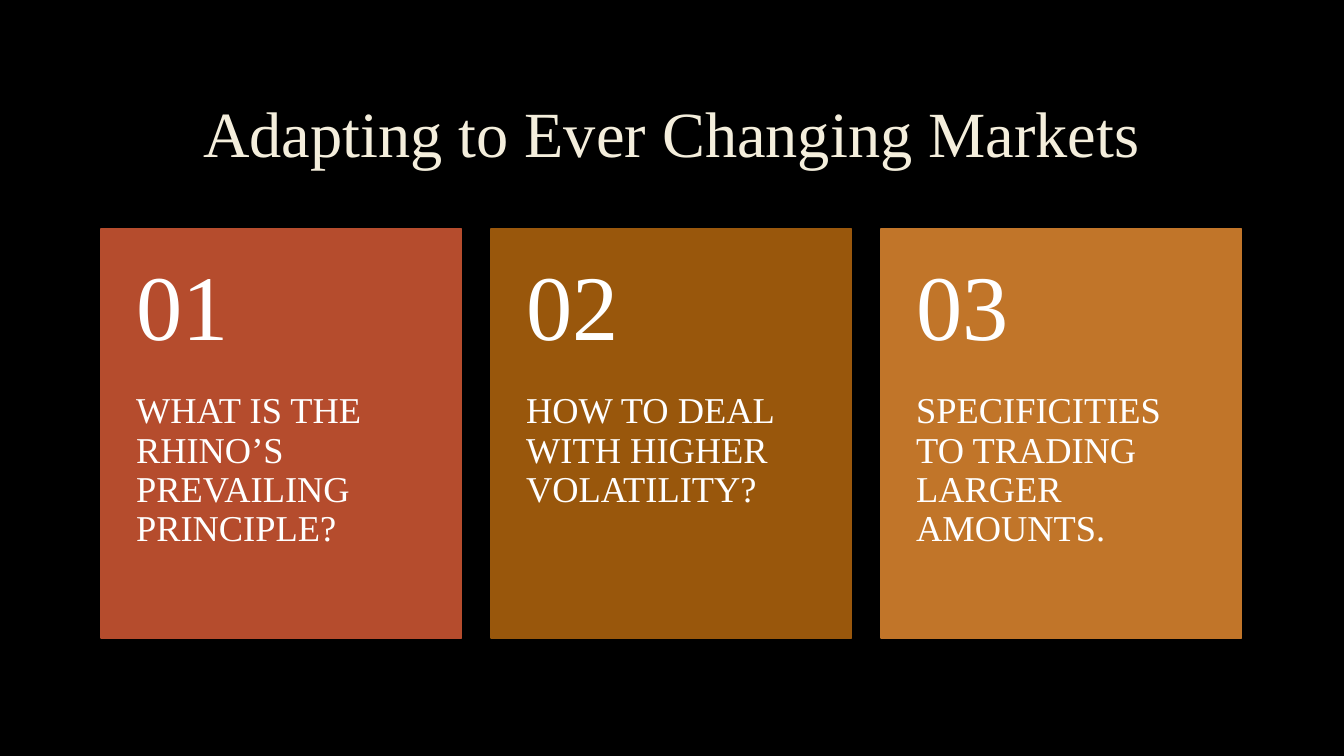
"""Build the slide of three numbered questions on adapting to markets."""
from pptx import Presentation
from pptx.dml.color import RGBColor
from pptx.enum import shapes, text
from pptx.util import Cm, Pt

RUST = RGBColor(0xB5, 0x4C, 0x2D)
BROWN = RGBColor(0x99, 0x57, 0x0C)
OCHRE = RGBColor(0xC1, 0x75, 0x29)
CREAM = RGBColor(0xF4, 0xEE, 0xDC)
WHITE = RGBColor(0xFF, 0xFF, 0xFF)
BLACK = RGBColor(0x00, 0x00, 0x00)
FONT = "Times New Roman"

TITLE = "Adapting to Ever Changing Markets"
CARDS = [
    ("01", "WHAT IS THE RHINO’S PREVAILING PRINCIPLE?", RUST),
    ("02", "HOW TO DEAL WITH HIGHER VOLATILITY?", BROWN),
    ("03", "SPECIFICITIES TO TRADING LARGER AMOUNTS.", OCHRE),
]

LEFT, TOP = Cm(2.54), Cm(5.77)
CARD_WIDTH, CARD_HEIGHT = Cm(9.09), Cm(10.31)
CARD_STEP = Cm(9.83)
NUMBER_HEIGHT = Cm(4.12)
SIDE_INSET = Cm(0.89)


def write(frame, content, size, color, alignment, anchor):
    frame.word_wrap = True
    frame.auto_size = text.MSO_AUTO_SIZE.NONE
    frame.vertical_anchor = anchor
    paragraph = frame.paragraphs[0]
    paragraph.alignment = alignment
    paragraph.line_spacing = 0.9
    run = paragraph.add_run()
    run.text = content
    run.font.name = FONT
    run.font.size = Pt(size)
    run.font.color.rgb = color


def add_label(slide, content, size, left, top, height, insets, anchor):
    box = slide.shapes.add_textbox(left, top, CARD_WIDTH, height)
    frame = box.text_frame
    frame.margin_left = frame.margin_right = SIDE_INSET
    frame.margin_top, frame.margin_bottom = insets
    write(frame, content, size, WHITE, text.PP_ALIGN.LEFT, anchor)


def add_card(slide, left, number, question, color):
    card = slide.shapes.add_shape(
        shapes.MSO_SHAPE.RECTANGLE, left, TOP, CARD_WIDTH, CARD_HEIGHT)
    card.shadow.inherit = False
    card.fill.solid()
    card.fill.fore_color.rgb = color
    card.line.color.rgb = color
    card.line.width = Pt(1.25)
    add_label(slide, question, 26, left, TOP + NUMBER_HEIGHT,
              CARD_HEIGHT - NUMBER_HEIGHT, (Cm(0), Cm(0.91)),
              text.MSO_ANCHOR.TOP)
    add_label(slide, number, 66, left, TOP, NUMBER_HEIGHT,
              (Cm(0.46), Cm(0.46)), text.MSO_ANCHOR.MIDDLE)


def main():
    presentation = Presentation()
    presentation.slide_width, presentation.slide_height = Cm(33.87), Cm(19.05)
    slide = presentation.slides.add_slide(
        presentation.slide_layouts.get_by_name("Title Only"))
    slide.background.fill.solid()
    slide.background.fill.fore_color.rgb = BLACK

    title = slide.shapes.title
    title.left, title.top = LEFT, Cm(1.7)
    title.width, title.height = Cm(28.75), Cm(3.51)
    write(title.text_frame, TITLE, 46, CREAM,
          text.PP_ALIGN.CENTER, text.MSO_ANCHOR.MIDDLE)

    for index, card in enumerate(CARDS):
        add_card(slide, LEFT + index * CARD_STEP, *card)
    presentation.save("out.pptx")


if __name__ == "__main__":
    main()
